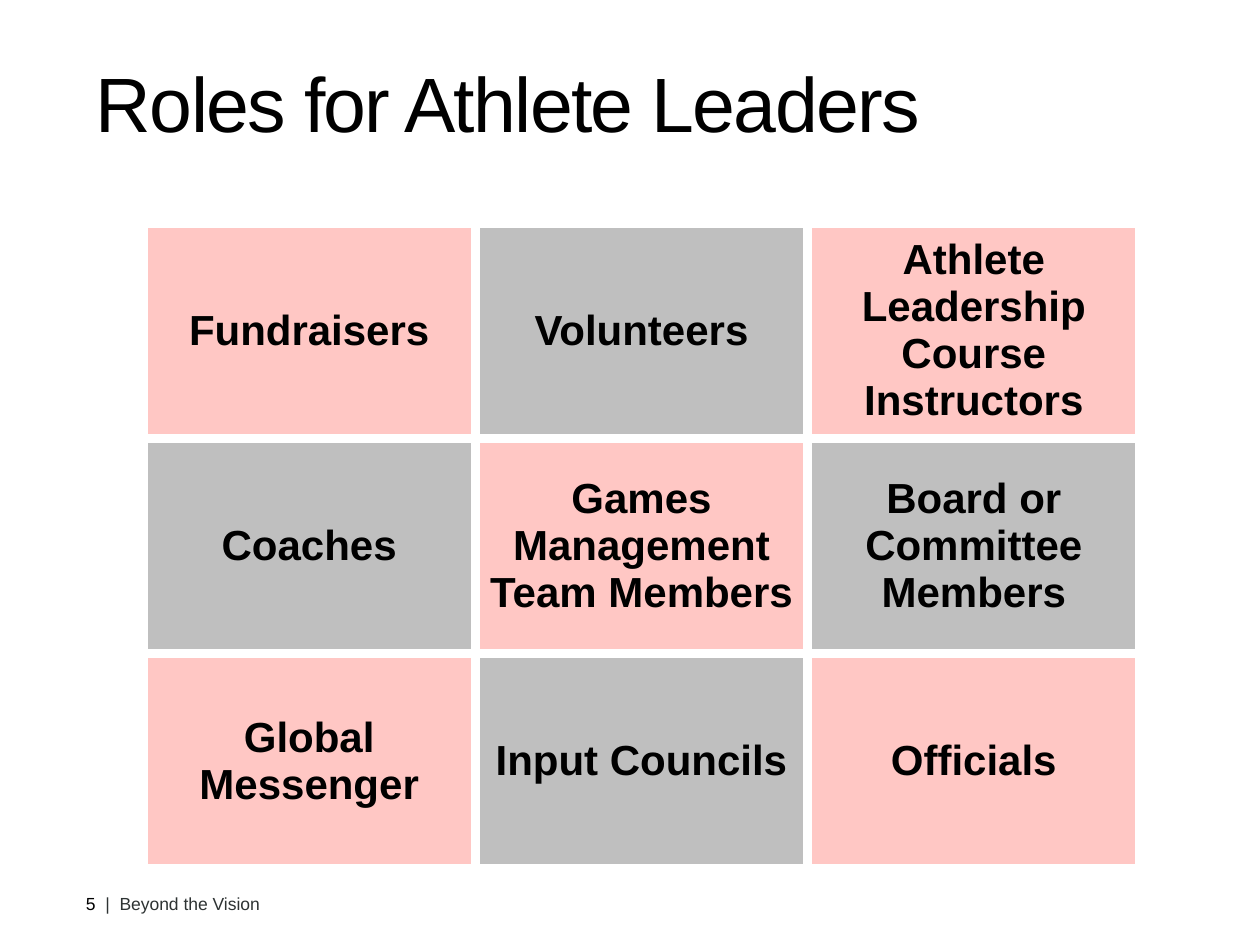
from lxml import etree
from pptx import Presentation
from pptx import util as u
from pptx.dml.color import RGBColor
from pptx.enum import text
from pptx.oxml.ns import qn

PX = 914400 / 126
BLACK = RGBColor(0x00, 0x00, 0x00)
CHARCOAL = RGBColor(0x2E, 0x33, 0x33)
PINK = RGBColor(0xFF, 0xC7, 0xC4)
GREY = RGBColor(0xBF, 0xBF, 0xBF)
ROLES = [
    ["Fundraisers", "Volunteers", "Athlete Leadership Course Instructors"],
    ["Coaches", "Games Management Team Members", "Board or Committee Members"],
    ["Global Messenger", "Input Councils", "Officials"],
]


def px(*lengths):
    return [u.Emu(round(length * PX)) for length in lengths]


def add_white_borders(cell):
    properties = cell._tc.get_or_add_tcPr()
    for position, side in enumerate(("lnL", "lnR", "lnT", "lnB")):
        line = etree.Element(qn(f"a:{side}"), w=str(u.Pt(6)))
        fill = etree.SubElement(line, qn("a:solidFill"))
        etree.SubElement(fill, qn("a:srgbClr"), val="FFFFFF")
        properties.insert(position, line)


prs = Presentation()
prs.slide_width, prs.slide_height = px(1260, 945)
slide = prs.slides.add_slide(prs.slide_layouts[5])

# Title
title = slide.shapes.title
title.left, title.top, title.width, title.height = px(91, 38, 940, 157)
frame = title.text_frame
frame.text = "Roles for Athlete Leaders"
frame.word_wrap = True
frame.vertical_anchor = text.MSO_ANCHOR.MIDDLE
frame.margin_left, frame.margin_top, frame.margin_right, frame.margin_bottom = px(5, 5, 5, 5)
heading = frame.paragraphs[0]
heading.alignment = text.PP_ALIGN.LEFT
heading.line_spacing = u.Pt(36)
heading_run = heading.runs[0]
heading_run.font.name = "Arial"
heading_run.font.size = u.Pt(44)
heading_run.font.color.rgb = BLACK
heading_run.font._element.set("spc", "-100")

# Grid of roles in alternating colours
left, top, width, height = px(143, 223, 997, 646)
roles = slide.shapes.add_table(3, 3, left, top, width, height).table
roles.first_row = False
roles.horz_banding = False
for row, names in enumerate(ROLES):
    for column, name in enumerate(names):
        cell = roles.cell(row, column)
        cell.text_frame.text = name
        cell.vertical_anchor = text.MSO_ANCHOR.MIDDLE
        cell.fill.solid()
        cell.fill.fore_color.rgb = GREY if (row + column) % 2 else PINK
        add_white_borders(cell)
        paragraph = cell.text_frame.paragraphs[0]
        paragraph.alignment = text.PP_ALIGN.CENTER
        font = paragraph.runs[0].font
        font.name = "Arial"
        font.size = u.Pt(24)
        font.bold = True
        font.color.rgb = BLACK

# Footer
footer = slide.shapes.add_textbox(*px(77, 888, 483, 25)).text_frame
footer.word_wrap = True
footer.margin_left, footer.margin_top, footer.margin_right, footer.margin_bottom = px(9, 5, 9, 5)
for wording, color in (("5  ", BLACK), ("|  Beyond the Vision", CHARCOAL)):
    run = footer.paragraphs[0].add_run()
    run.text = wording
    run.font.name = "Arial"
    run.font.size = u.Pt(10)
    run.font.color.rgb = color

prs.save("out.pptx")
